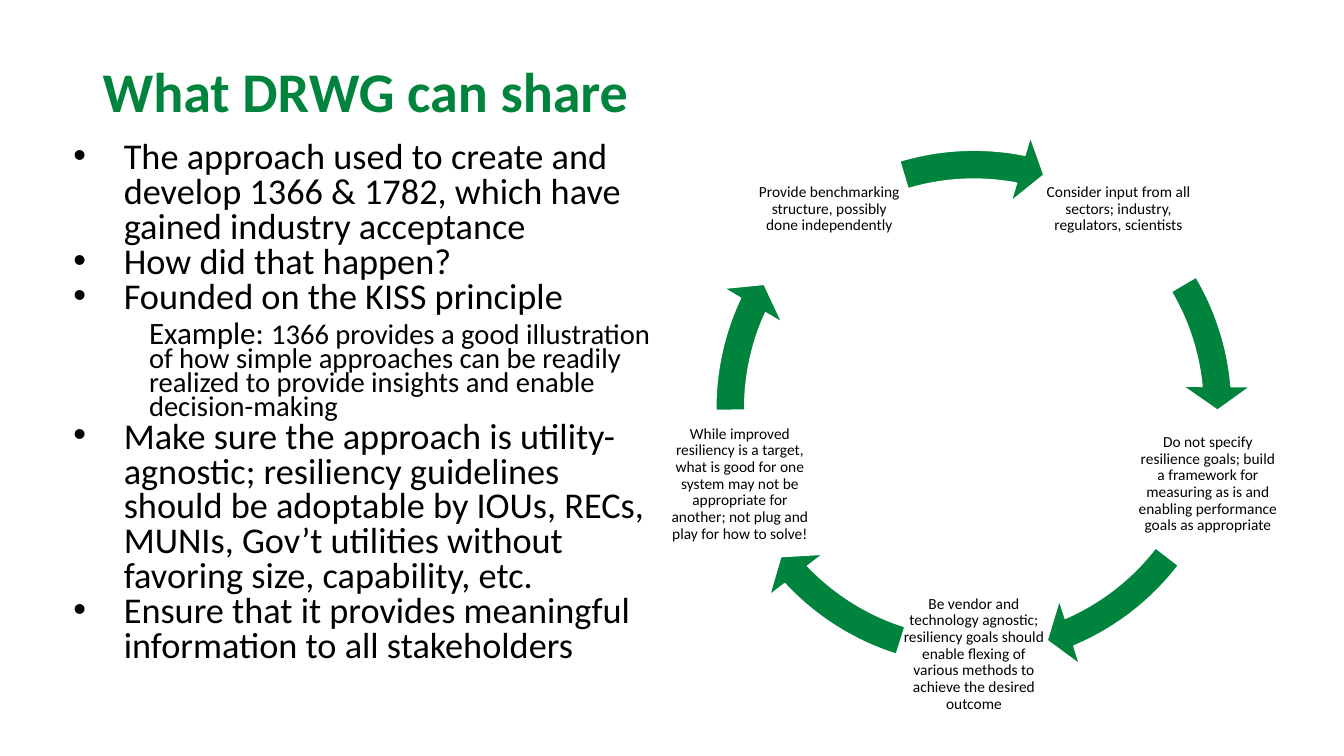
from math import cos, radians, sin

from lxml.etree import SubElement
from pptx import Presentation
from pptx.dml.color import RGBColor
from pptx.enum.shapes import MSO_SHAPE
from pptx.enum.text import MSO_ANCHOR, PP_ALIGN
from pptx.oxml.ns import qn
from pptx.util import Inches, Pt

COLORS = {"title": "00843D", "arrow": "00833C", "outline": "FFFFFF", "text": "000000"}
FONT = "Calibri"
TITLE = "What DRWG can share"
BODY = [
    ("point", [("The approach used to create and develop 1366 & 1782, which have gained industry acceptance", 25.9)]),
    ("point", [("How did that happen?", 25.9)]),
    ("point", [("Founded on the KISS principle", 25.9)]),
    ("example", [
        ("Example: ", 22.2),
        ("1366 provides a good illustration of how simple approaches can be readily "
         "realized to provide insights and enable decision-making", 20.4),
    ]),
    ("point", [("Make sure the approach is utility-agnostic; resiliency guidelines should be adoptable by "
                "IOUs, RECs, MUNIs, Gov’t utilities without favoring size, capability, etc.", 25.9)]),
    ("point", [("Ensure that it provides meaningful information to all stakeholders", 25.9)]),
]
STYLES = {
    "point": {"level": 0, "line_spacing": 0.8, "space_before": Pt(0)},
    "example": {"level": 1, "line_spacing": 0.7, "space_before": Pt(5)},
}
INDENTS = {"point": (0.5, -0.5), "example": (0.75, 0)}
CYCLE = [
    ("Consider input from all sectors; industry, regulators, scientists", 354.88, 329.44),
    ("Do not specify resilience goals; build a framework for measuring as is and "
     "enabling performance goals as appropriate", 66.9, 37.56),
    ("Be vendor and technology agnostic; resiliency goals should enable flexing of "
     "various methods to achieve the desired outcome", 136.84, 107.5),
    ("While improved resiliency is a target, what is good for one system may not be "
     "appropriate for another; not plug and play for how to solve!", 204.96, 179.52),
    ("Provide benchmarking structure, possibly done independently", 281.09, 253.31),
]
CENTER_X, CENTER_Y, RADIUS = 9.66, 4.05, 2.44
RING_SIZE, LABEL_SIZE = 5.5, 1.47
FIRST_ANGLE = -54
DEGREE = 0.6


def set_all(target, values):
    for name, value in values.items():
        setattr(target, name, value)


def add_box(page, left, top, width, height, **frame_format):
    box = page.shapes.add_textbox(Inches(left), Inches(top), Inches(width), Inches(height))
    set_all(box.text_frame, {"word_wrap": True, **frame_format})
    return box.text_frame


def add_span(para, text, size, color="text", bold=False):
    span = para.add_run()
    span.text = text
    set_all(span.font, {"name": FONT, "size": Pt(size), "bold": bold})
    span.font.color.rgb = RGBColor.from_string(COLORS[color])


def add_body(page):
    frame = add_box(page, 0.63, 1.36, 5.96, 5.73)
    for index, (kind, spans) in enumerate(BODY):
        para = frame.add_paragraph() if index else frame.paragraphs[0]
        set_all(para, STYLES[kind])
        properties = para._p.get_or_add_pPr()
        for name, length in zip(("marL", "indent"), INDENTS[kind]):
            properties.set(name, str(Inches(length)))
        if kind == "point":
            SubElement(properties, qn("a:buFont")).set("typeface", "Arial")
            SubElement(properties, qn("a:buChar")).set("char", "•")
        for text, size in spans:
            add_span(para, text, size)


def add_label(page, text, angle):
    left = CENTER_X + RADIUS * cos(angle) - LABEL_SIZE / 2
    top = CENTER_Y + RADIUS * sin(angle) - LABEL_SIZE / 2
    margins = {f"margin_{side}": Inches(0.02) for side in ("left", "top", "right", "bottom")}
    frame = add_box(page, left, top, LABEL_SIZE, LABEL_SIZE,
                    vertical_anchor=MSO_ANCHOR.MIDDLE, **margins)
    para = frame.paragraphs[0]
    set_all(para, {"alignment": PP_ALIGN.CENTER, "line_spacing": 0.9})
    add_span(para, text, 11)


def add_arrow(page, head, tail):
    size = Inches(RING_SIZE)
    arrow = page.shapes.add_shape(
        MSO_SHAPE.CIRCULAR_ARROW,
        Inches(CENTER_X - RING_SIZE / 2), Inches(CENTER_Y - RING_SIZE / 2), size, size)
    arrow.shadow.inherit = False
    values = (5.2 / 100, 5.6 * DEGREE, head * DEGREE, tail * DEGREE, 6.07 / 100)
    for index, value in enumerate(values):
        arrow.adjustments[index] = value
    arrow.fill.solid()
    arrow.fill.fore_color.rgb = RGBColor.from_string(COLORS["arrow"])
    arrow.line.color.rgb = RGBColor.from_string(COLORS["outline"])
    arrow.line.width = Pt(1)


def main():
    deck = Presentation()
    set_all(deck, {"slide_width": Inches(13.33), "slide_height": Inches(7.5)})
    page = deck.slides.add_slide(deck.slide_layouts[6])
    add_body(page)
    for index, (text, head, tail) in enumerate(CYCLE):
        add_label(page, text, radians(FIRST_ANGLE + index * 360 / len(CYCLE)))
        add_arrow(page, head, tail)
    title = add_box(page, 0.92, 0.51, 8.25, 0.73)
    add_span(title.paragraphs[0], TITLE, 40, "title", True)
    deck.save("out.pptx")


if __name__ == "__main__":
    main()
